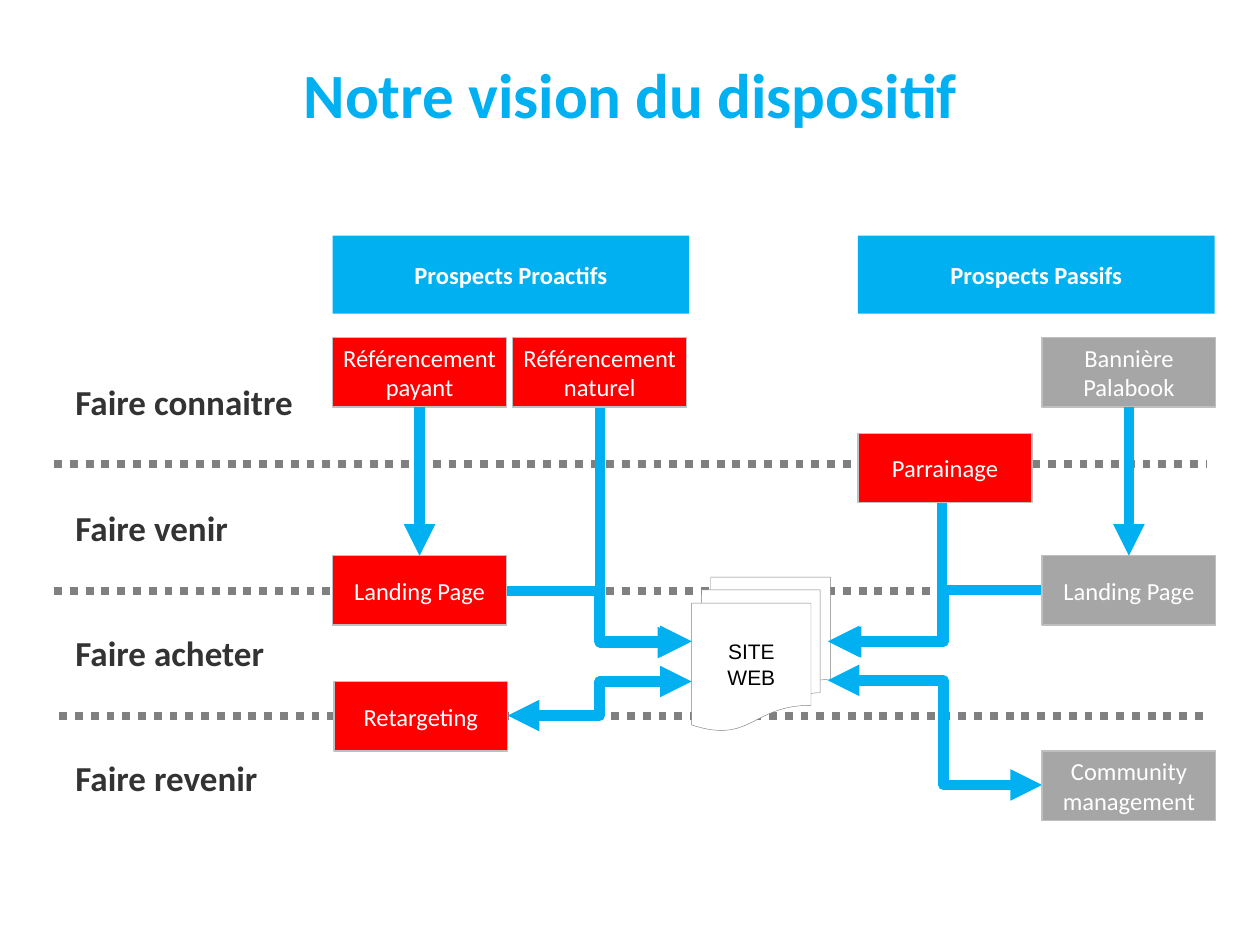
import dataclasses
from typing import Optional

import lxml.etree
import pptx
import pptx.dml.color
import pptx.enum.dml
import pptx.enum.shapes
import pptx.enum.text
import pptx.oxml.ns
import pptx.util

Inches = pptx.util.Inches
Pt = pptx.util.Pt
qn = pptx.oxml.ns.qn
Shape = pptx.enum.shapes.MSO_SHAPE
Link = pptx.enum.shapes.MSO_CONNECTOR

COLORS = {
    "blue": "00B0F0", "red": "FF0000", "gray": "A6A6A6", "border": "BFBFBF",
    "dots": "808080", "white": "FFFFFF", "black": "000000", "text": "333333",
}
CENTER = pptx.enum.text.PP_ALIGN.CENTER
LEFT = pptx.enum.text.PP_ALIGN.LEFT
MIDDLE = pptx.enum.text.MSO_ANCHOR.MIDDLE
MARGINS = ("margin_left", "margin_top", "margin_right", "margin_bottom")
BOX_WIDTH, BOX_HEIGHT = 1.38, 0.55


@dataclasses.dataclass
class Box:
    text: str
    left: float
    top: float
    fill: str
    width: float = BOX_WIDTH
    height: float = BOX_HEIGHT
    border: Optional[str] = "border"
    border_width: float = 0.75
    shape: Shape = Shape.RECTANGLE
    margin: Optional[float] = 0.04
    size: int = 14
    font: str = "Calibri"
    color: str = "white"
    bold: bool = False


@dataclasses.dataclass
class Elbow:
    begin: tuple[float, float]
    end: tuple[float, float]
    adjust: Optional[float] = 0.5
    rotation: int = 0
    both_ends: bool = False


STEPS = ["Faire connaitre", "Faire venir", "Faire acheter", "Faire revenir"]
DIVIDERS = [(0.43, 9.57, 3.68), (0.43, 9.57, 4.69), (0.47, 9.6, 5.68)]
HEADERS = [
    Box(text, left, 1.87, "blue", 2.83, 0.62, None, bold=True)
    for text, left in (("Prospects Proactifs", 2.64), ("Prospects Passifs", 6.81))
]
BOXES = {
    "paid": Box("Référencement payant", 2.64, 2.68, "red"),
    "natural": Box("Référencement naturel", 4.07, 2.68, "red"),
    "banner": Box("Bannière Palabook", 8.27, 2.68, "gray"),
    "referral": Box("Parrainage", 6.81, 3.44, "red"),
    "proactive landing": Box("Landing Page", 2.64, 4.41, "red"),
    "passive landing": Box("Landing Page", 8.27, 4.41, "gray"),
    "retargeting": Box("Retargeting", 2.65, 5.41, "red"),
    "community": Box("Community management", 8.27, 5.96, "gray"),
}
ARROWS = [("paid", "proactive landing"), ("banner", "passive landing")]
ELBOWS = [
    Elbow((6.05, 3.81), (4.18, 4.52), 1.0, 270),
    Elbow((4.02, 4.69), (5.49, 5.09)),
    Elbow((4.03, 5.68), (5.49, 5.41), both_ends=True),
    Elbow((6.57, 5.4), (8.27, 6.23), 0.54, both_ends=True),
    Elbow((6.57, 5.09), (8.27, 4.68), 0.46, 180),
    Elbow((6.38, 4.0), (7.68, 4.89), None, 90),
]
WEBSITE = Box("SITE WEB", 5.49, 4.58, "white", 1.1, 1.22, "dots", 0.25,
              Shape.FLOWCHART_MULTIDOCUMENT, None, 12, "Arial", "black")


def rgb(name: str) -> pptx.dml.color.RGBColor:
    return pptx.dml.color.RGBColor.from_string(COLORS[name])


def apply(target, values: dict) -> None:
    for name, value in values.items():
        setattr(target, name, value)


def write(frame, texts: list[str], size: int, font: str, color: str,
          bold: bool, align, gap: float = 0) -> None:
    apply(frame, {"word_wrap": True, "vertical_anchor": MIDDLE})
    for index, text in enumerate(texts):
        para = frame.paragraphs[0] if index == 0 else frame.add_paragraph()
        para.alignment = align
        if index:
            para.space_before = Pt(gap)
        span = para.add_run()
        span.text = text
        apply(span.font, {"size": Pt(size), "name": font, "bold": bold})
        span.font.color.rgb = rgb(color)


def draw_box(page, box: Box):
    shape = page.shapes.add_shape(
        box.shape, Inches(box.left), Inches(box.top),
        Inches(box.width), Inches(box.height))
    shape.shadow.inherit = False
    shape.fill.solid()
    shape.fill.fore_color.rgb = rgb(box.fill)
    if box.border:
        shape.line.color.rgb = rgb(box.border)
        shape.line.width = Pt(box.border_width)
    else:
        shape.line.fill.background()
    if box.margin is not None:
        apply(shape.text_frame, dict.fromkeys(MARGINS, Inches(box.margin)))
    write(shape.text_frame, [box.text], box.size, box.font, box.color, box.bold, CENTER)
    return shape


def draw_line(page, kind: Link, begin: tuple[float, float],
              end: tuple[float, float], color: str, width: float):
    line = page.shapes.add_connector(kind, *map(Inches, begin + end))
    lxml.etree.SubElement(line.element.spPr, qn("a:effectLst"))
    line.line.color.rgb = rgb(color)
    line.line.width = Pt(width)
    return line


def add_heads(line, both_ends: bool = False) -> None:
    outline = line.line._get_or_add_ln()
    lxml.etree.SubElement(outline, qn("a:round"))
    for tag in ("a:headEnd", "a:tailEnd") if both_ends else ("a:tailEnd",):
        lxml.etree.SubElement(outline, qn(tag), type="triangle")


def draw_elbow(page, elbow: Elbow) -> None:
    line = draw_line(page, Link.ELBOW, elbow.begin, elbow.end, "blue", 6)
    add_heads(line, elbow.both_ends)
    properties = line.element.spPr
    if elbow.rotation:
        properties.find(qn("a:xfrm")).set("rot", str(elbow.rotation * 60000))
    geometry = properties.find(qn("a:prstGeom"))
    if elbow.adjust is None:
        geometry.set("prst", "bentConnector2")
    else:
        lxml.etree.SubElement(geometry.find(qn("a:avLst")), qn("a:gd"), name="adj1",
                              fmla=f"val {round(elbow.adjust * 100000)}")


def draw_arrow(page, source, target) -> None:
    line = draw_line(page, Link.STRAIGHT, (0, 0), (1, 1), "blue", 6)
    line.begin_connect(source, 2)
    line.end_connect(target, 0)
    add_heads(line)


def main() -> None:
    deck = pptx.Presentation()
    apply(deck, {"slide_width": Inches(10), "slide_height": Inches(7.5)})
    page = deck.slides.add_slide(deck.slide_layouts[6])

    steps = page.shapes.add_textbox(Inches(0.5), Inches(3.05), Inches(2.06), Inches(3.26))
    write(steps.text_frame, STEPS, 20, "Calibri", "text", True, LEFT, 47.6)
    title = page.shapes.add_textbox(Inches(1.46), Inches(0.23), Inches(7.09), Inches(1.02))
    write(title.text_frame, ["Notre vision du dispositif"], 36, "Calibri", "blue", True, CENTER)

    for left, right, top in DIVIDERS:
        divider = draw_line(page, Link.STRAIGHT, (left, top), (right, top), "dots", 4.5)
        divider.line.dash_style = pptx.enum.dml.MSO_LINE.ROUND_DOT
    draw_box(page, WEBSITE)
    for elbow in ELBOWS:
        draw_elbow(page, elbow)
    for header in HEADERS:
        draw_box(page, header)
    shapes = {name: draw_box(page, box) for name, box in BOXES.items()}
    for source, target in ARROWS:
        draw_arrow(page, shapes[source], shapes[target])

    deck.save("out.pptx")


if __name__ == "__main__":
    main()
